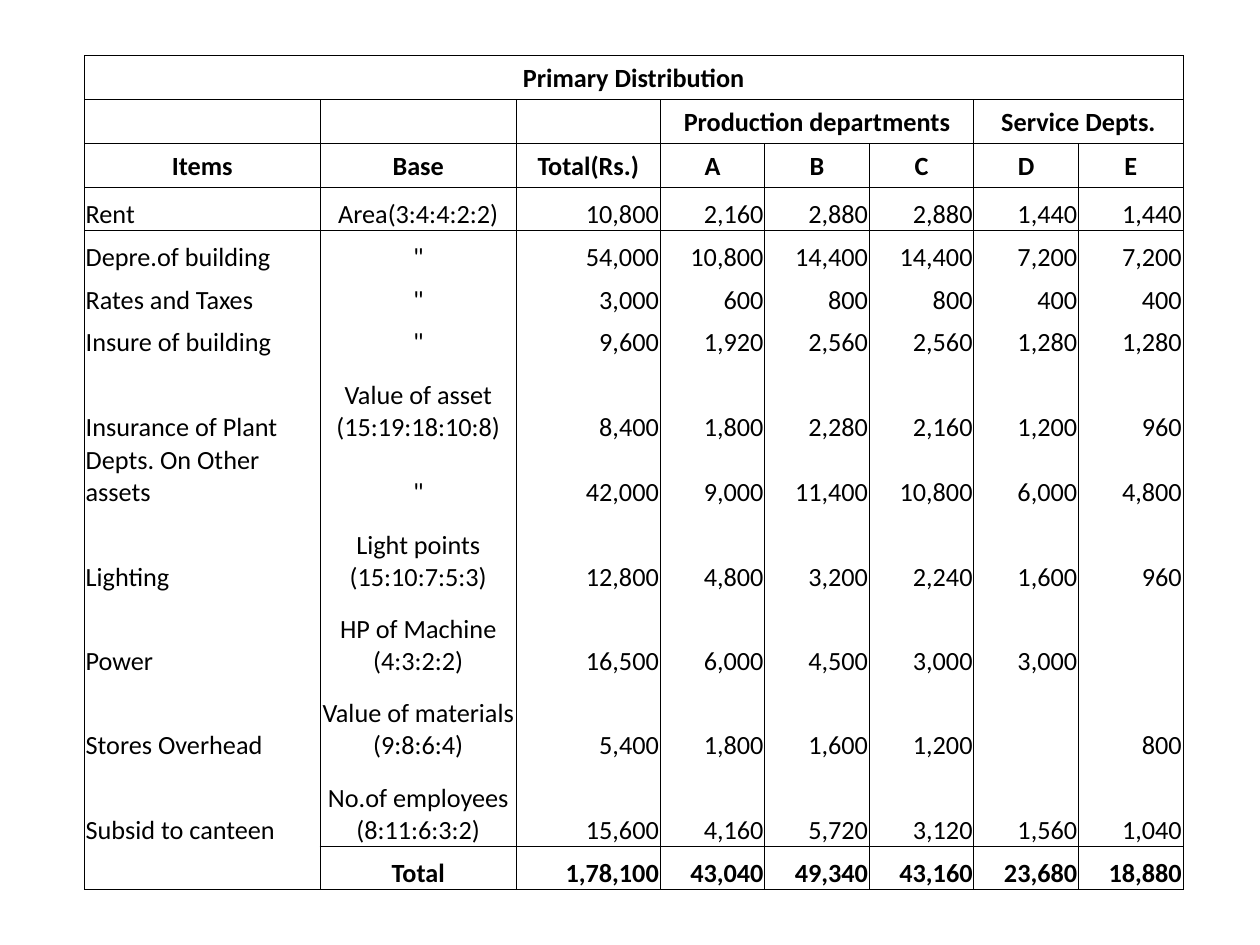
from lxml import etree
from pptx import Presentation
from pptx.dml.color import RGBColor
from pptx.enum.text import MSO_ANCHOR as Anchor, PP_ALIGN as Align
from pptx.oxml.ns import qn
from pptx.util import Inches, Pt

INK = "000000"
NO_GRID = "{2D5ABB26-0587-4C30-8999-92F81FD0307C}"

ROWS = [
    ["Primary Distribution"] + [""] * 7,
    ["", "", "", "Production departments", "", "", "Service Depts.", ""],
    ["Items", "Base", "Total(Rs.)", "A", "B", "C", "D", "E"],
    ["Rent", "Area(3:4:4:2:2)", "10,800", "2,160", "2,880", "2,880", "1,440", "1,440"],
    ["Depre.of building", '"', "54,000", "10,800", "14,400", "14,400", "7,200", "7,200"],
    ["Rates and Taxes", '"', "3,000", "600", "800", "800", "400", "400"],
    ["Insure of building", '"', "9,600", "1,920", "2,560", "2,560", "1,280", "1,280"],
    ["Insurance of Plant", "Value of asset (15:19:18:10:8)",
     "8,400", "1,800", "2,280", "2,160", "1,200", "960"],
    ["Depts. On Other assets", '"', "42,000", "9,000", "11,400", "10,800", "6,000", "4,800"],
    ["Lighting", "Light points (15:10:7:5:3)",
     "12,800", "4,800", "3,200", "2,240", "1,600", "960"],
    ["Power", "HP of Machine (4:3:2:2)", "16,500", "6,000", "4,500", "3,000", "3,000", ""],
    ["Stores Overhead", "Value of materials (9:8:6:4)",
     "5,400", "1,800", "1,600", "1,200", "", "800"],
    ["Subsid to canteen", "No.of employees (8:11:6:3:2)",
     "15,600", "4,160", "5,720", "3,120", "1,560", "1,040"],
    ["", "Total", "1,78,100", "43,040", "49,340", "43,160", "23,680", "18,880"],
]
WIDTHS = [1.87, 1.56, 1.14] + [0.83] * 5
HEIGHTS = [0.35] * 3 + [0.34] * 4 + [0.67, 0.52] + [0.67] * 4 + [0.34]
HEAD = 3
LAST = len(ROWS) - 1


def rule(cell, sides):
    """Draw thin lines on the given sides, a string drawn from LRTB in that order."""
    props = cell._tc.get_or_add_tcPr()
    for i, side in enumerate(sides):
        line = etree.Element(qn("a:ln" + side), w=str(Pt(0.5)))
        fill = etree.SubElement(line, qn("a:solidFill"))
        etree.SubElement(fill, qn("a:srgbClr"), val=INK)
        props.insert(i, line)


deck = Presentation()
deck.slide_width, deck.slide_height = Inches(10), Inches(7.5)
slide = deck.slides.add_slide(deck.slide_layouts[6])

frame = slide.shapes.add_table(len(ROWS), len(WIDTHS), Inches(0.67), Inches(0.44),
                               Inches(sum(WIDTHS)), Inches(sum(HEIGHTS)))
table = frame.table
table.horz_banding = table.first_row = False
table._tbl.tblPr.find(qn("a:tableStyleId")).text = NO_GRID
for col, width in zip(table.columns, WIDTHS):
    col.width = Inches(width)
for row, height in zip(table.rows, HEIGHTS):
    row.height = Inches(height)

for r, texts in enumerate(ROWS):
    for c, text in enumerate(texts):
        cell = table.cell(r, c)
        cell.fill.background()
        cell.margin_left = cell.margin_right = cell.margin_top = Inches(0.01)
        cell.margin_bottom = 0
        cell.vertical_anchor = Anchor.MIDDLE if r < HEAD else Anchor.BOTTOM

        sides = "LR"
        if r <= HEAD or (r == LAST and c > 0):
            sides += "T"
        if r < HEAD or r == LAST or (r == LAST - 1 and c > 0):
            sides += "B"
        rule(cell, sides)

        if not text:
            continue
        cell.text_frame.text = text
        para = cell.text_frame.paragraphs[0]
        if r < HEAD or c == 1:
            para.alignment = Align.CENTER
        else:
            para.alignment = Align.LEFT if c == 0 else Align.RIGHT
        font = para.runs[0].font
        font.name, font.size = "Calibri", Pt(15)
        font.bold = r < HEAD or r == LAST
        font.color.rgb = RGBColor.from_string(INK)

for r, first, last in [(0, 0, 7), (1, 3, 5), (1, 6, 7)]:
    table.cell(r, first).merge(table.cell(r, last))

deck.save("out.pptx")
